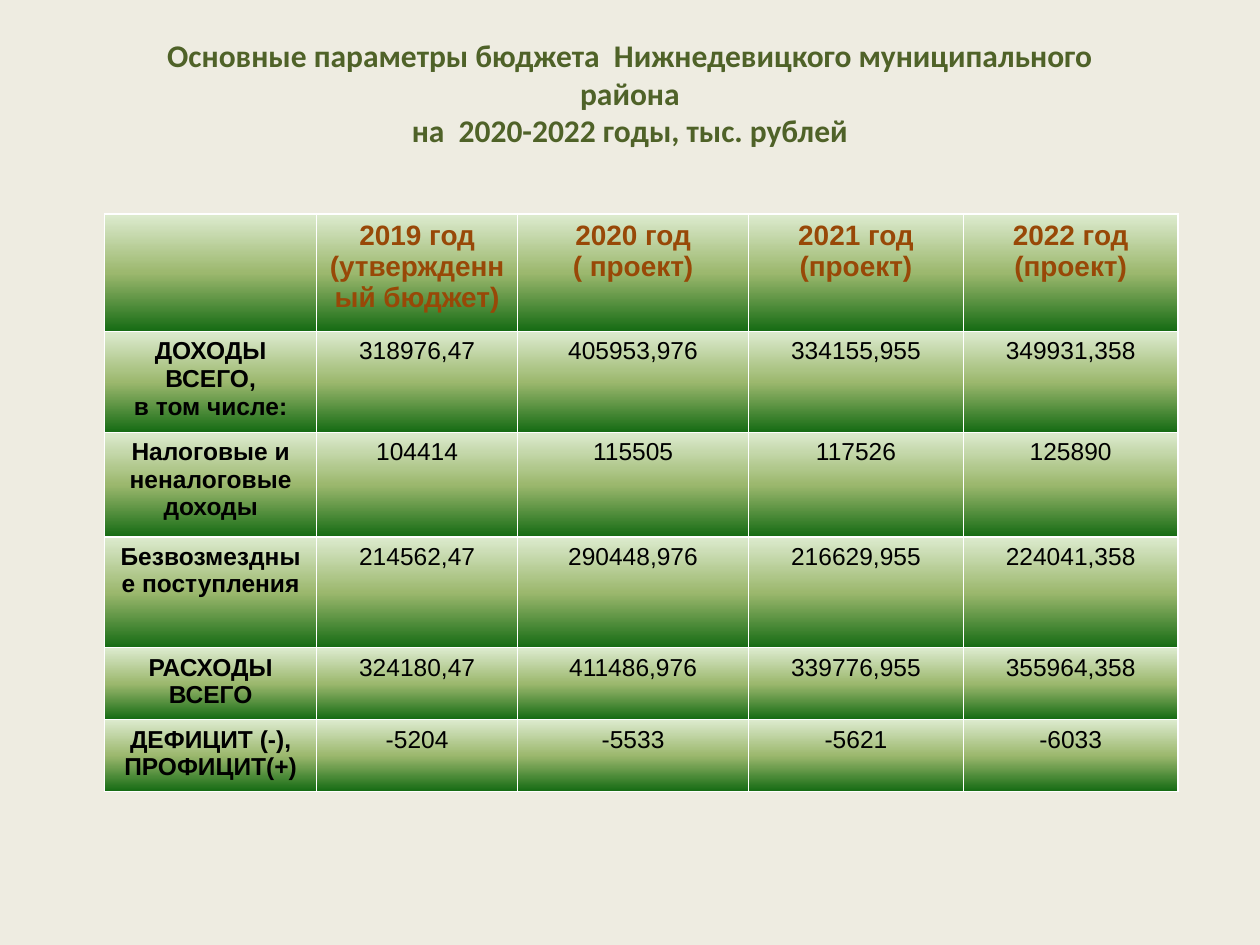
from lxml import etree
from pptx import Presentation
from pptx.dml.color import RGBColor
from pptx.enum.text import MSO_ANCHOR, PP_ALIGN
from pptx.oxml.ns import qn
from pptx.util import Inches, Pt

CENTER = PP_ALIGN.CENTER
MIDDLE = MSO_ANCHOR.MIDDLE

COLORS = {
    "back": "EEECE1",
    "title": "4F6228",
    "head": "984807",
    "body": "000000",
}
STOPS = {0: "DDEBCF", 50: "9CB86E", 100: "156B13"}

FORMATS = {
    "title": {"name": "Calibri", "size": Pt(18), "bold": True},
    "head": {"name": "Arial", "size": Pt(16), "bold": True},
    "label": {"name": "Arial", "size": Pt(14), "bold": True},
    "value": {"name": "Arial", "size": Pt(14), "bold": False},
}

TITLE = (
    "Основные параметры бюджета  Нижнедевицкого муниципального\n"
    "района\n"
    "на  2020-2022 годы, тыс. рублей"
)
COLS = [1.68, 1.59, 1.83, 1.7, 1.7]
ROWS = [0.93, 0.59, 0.83, 0.88, 0.57, 0.57]
BUDGET = [
    ["", "2019 год (утвержденный бюджет)", "2020 год\n( проект)",
     "2021 год\n(проект)", "2022 год\n(проект)"],
    ["ДОХОДЫ ВСЕГО,\nв том числе:",
     "318976,47", "405953,976", "334155,955", "349931,358"],
    ["Налоговые и неналоговые доходы",
     "104414", "115505", "117526", "125890"],
    ["Безвозмездные поступления",
     "214562,47", "290448,976", "216629,955", "224041,358"],
    ["РАСХОДЫ ВСЕГО",
     "324180,47", "411486,976", "339776,955", "355964,358"],
    ["ДЕФИЦИТ (-),\nПРОФИЦИТ(+)",
     "-5204", "-5533", "-5621", "-6033"],
]


def style(frame, kind):
    color = RGBColor.from_string(COLORS.get(kind, COLORS["body"]))
    for para in frame.paragraphs:
        para.alignment = CENTER
        for run in para.runs:
            for key, value in FORMATS[kind].items():
                setattr(run.font, key, value)
            run.font.color.rgb = color


def shade(cell):
    props = cell._tc.get_or_add_tcPr()
    fill = etree.SubElement(props, qn("a:gradFill"), rotWithShape="1")
    stops = etree.SubElement(fill, qn("a:gsLst"))
    for place, color in STOPS.items():
        stop = etree.SubElement(stops, qn("a:gs"), pos=str(place * 1000))
        etree.SubElement(stop, qn("a:srgbClr"), val=color)
    etree.SubElement(fill, qn("a:lin"), ang="5400000", scaled="0")


def add_title(slide, left, top, width, height):
    box = slide.shapes.add_textbox(left, top, width, height)
    frame = box.text_frame
    frame.word_wrap = True
    frame.vertical_anchor = MIDDLE
    frame.paragraphs[0].text = TITLE
    style(frame, "title")


def add_budget(slide, left, top, width, height):
    shape = slide.shapes.add_table(
        len(ROWS), len(COLS), left, top, width, height)
    table = shape.table
    table.horz_banding = False
    for col, part in zip(table.columns, COLS):
        col.width = int(width * part / sum(COLS))
    for row, part in zip(table.rows, ROWS):
        row.height = int(height * part / sum(ROWS))
    for r, line in enumerate(BUDGET):
        for c, text in enumerate(line):
            cell = table.cell(r, c)
            cell.text = text
            kind = "head" if r == 0 else "label" if c == 0 else "value"
            style(cell.text_frame, kind)
            shade(cell)


def main():
    deck = Presentation()
    deck.slide_width, deck.slide_height = Inches(10), Inches(7.5)
    slide = deck.slides.add_slide(deck.slide_layouts[6])
    back = slide.background.fill
    back.solid()
    back.fore_color.rgb = RGBColor.from_string(COLORS["back"])
    add_title(slide, Inches(0.5), Inches(0.3), Inches(9), Inches(0.87))
    add_budget(slide, Inches(0.83), Inches(1.7), Inches(8.52), Inches(4.37))
    deck.save("out.pptx")


if __name__ == "__main__":
    main()
